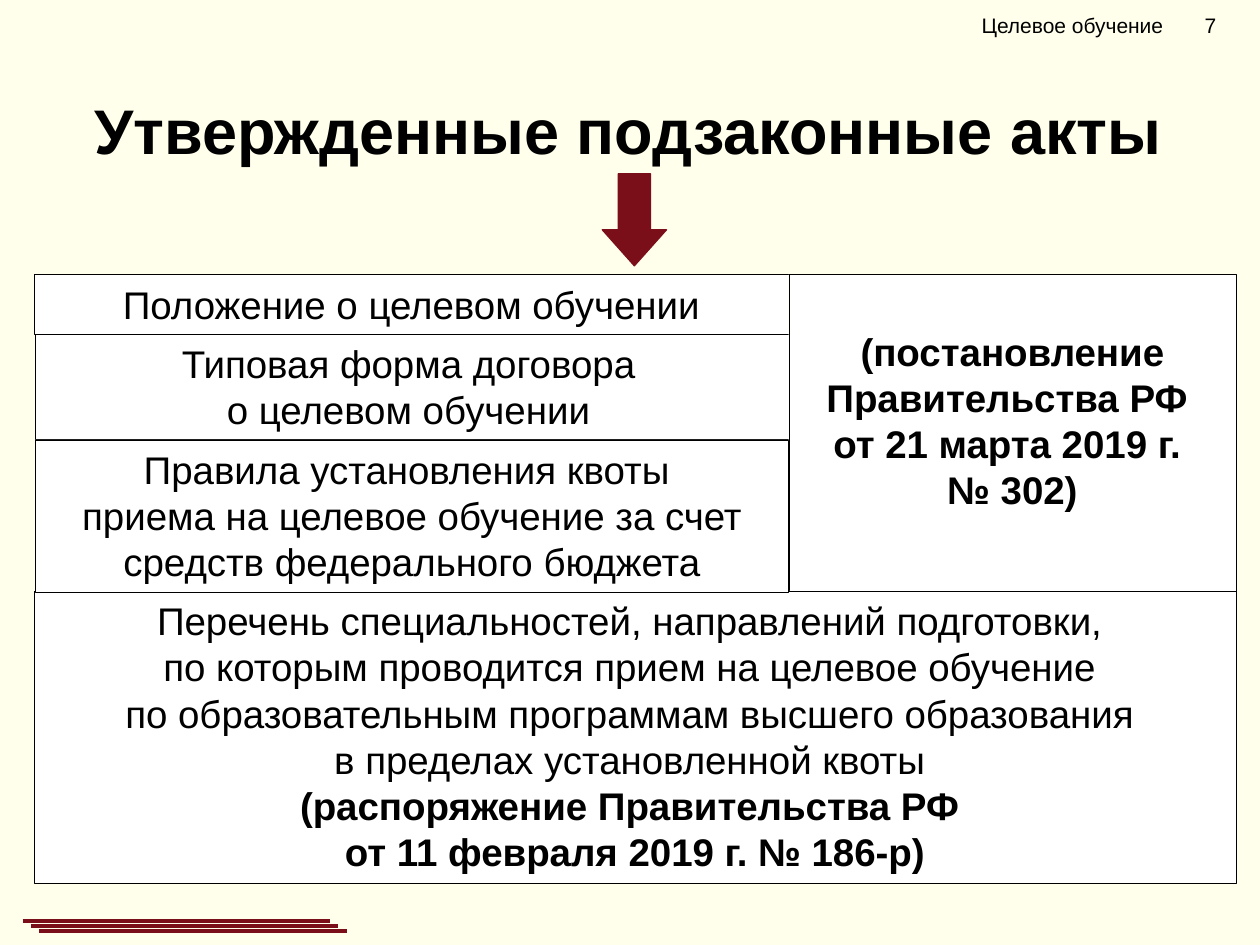
"""Build the slide on approved by-laws for targeted education."""
from lxml import etree
from pptx import Presentation
from pptx.dml.color import RGBColor as RGB
from pptx.enum.shapes import MSO_CONNECTOR as CONN, MSO_SHAPE as SHAPE
from pptx.enum.text import MSO_ANCHOR as ANCHOR, PP_ALIGN as ALIGN
from pptx.oxml.ns import qn
from pptx.util import Inches, Pt

THEME = {
    "font": "Arial", "paper": RGB(255, 255, 235), "white": RGB(255, 255, 255),
    "ink": RGB(0, 0, 0), "accent": RGB(0x7B, 0x0F, 0x19),
    "title": Pt(36), "body": Pt(22), "header": Pt(12),
}


def write(sp, lines, size, bold_from, align=ALIGN.CENTER, **frame):
    tf = sp.text_frame
    for name, value in {"word_wrap": True, "vertical_anchor": ANCHOR.TOP, **frame}.items():
        setattr(tf, name, value)
    for i, line in enumerate(lines):
        p = tf.paragraphs[0] if i == 0 else tf.add_paragraph()
        p.alignment = align
        r = p.add_run()
        r.text = line
        font = {"name": THEME["font"], "size": THEME[size], "bold": i >= bold_from}
        for name, value in font.items():
            setattr(r.font, name, value)
        r.font.color.rgb = THEME["ink"]


def paint(sp, fill, line, width):
    sp.shadow.inherit = False
    sp.fill.solid()
    sp.fill.fore_color.rgb = THEME[fill]
    sp.line.color.rgb = THEME[line]
    sp.line.width = Pt(width)


prs = Presentation()
prs.slide_width, prs.slide_height = Inches(10), Inches(7.5)
s = prs.slides.add_slide(prs.slide_layouts[6])
s.background.fill.solid()
s.background.fill.fore_color.rgb = THEME["paper"]

arrow = s.shapes.add_shape(SHAPE.DOWN_ARROW, Inches(4.78), Inches(1.38), Inches(0.51), Inches(0.73))
arrow.adjustments[0], arrow.adjustments[1] = 0.5, 0.56
paint(arrow, "accent", "accent", 0.75)

title = s.shapes.add_textbox(Inches(0.26), Inches(0.68), Inches(9.59), Inches(0.71))
write(title, ["Утвержденные подзаконные акты "], "title", 0)

header = s.shapes.add_textbox(Inches(7.44), Inches(0), Inches(2.56), Inches(0.4))
write(header, ["Целевое обучение\t7"], "header", 1, ALIGN.LEFT,
      vertical_anchor=ANCHOR.MIDDLE, margin_left=Inches(0.35))
tabs = etree.SubElement(header.text_frame.paragraphs[0]._p.get_or_add_pPr(), qn("a:tabLst"))
etree.SubElement(tabs, qn("a:tab"), pos=str(Inches(1.77)), algn="l")

acts = [
    (0.27, 2.18, 5.99, 0.47, 1, 0.05, ["Положение о целевом обучении"]),
    (0.28, 2.65, 6.01, 0.84, 2, 0.05, ["Типовая форма договора ", "о целевом обучении "]),
    (6.26, 2.18, 3.55, 2.69, 0, 0.42, [
        "(постановление Правительства РФ ", "от 21 марта 2019 г. ", "№ 302)"]),
    (0.27, 4.69, 9.54, 2.32, 4, 0.05, [
        "Перечень специальностей, направлений подготовки, ",
        "по которым проводится прием на целевое обучение ",
        "по образовательным программам высшего образования ",
        "в пределах установленной квоты ",
        "(распоряжение Правительства РФ ",
        "от 11 февраля 2019 г. № 186-р)"]),
    (0.28, 3.49, 5.98, 1.21, 2, 0.05, [
        "Правила установления квоты ",
        "приема на целевое обучение за счет средств федерального бюджета"]),
]
for x, y, w, h, bold_from, top, lines in acts:
    sp = s.shapes.add_shape(SHAPE.RECTANGLE, Inches(x), Inches(y), Inches(w), Inches(h))
    paint(sp, "white", "ink", 0.25)
    write(sp, lines, "body", bold_from, margin_top=Inches(top))

for i in range(3):
    x, y = 0.18 + 0.065 * i, 7.31 + 0.04 * i
    stripe = s.shapes.add_connector(CONN.STRAIGHT, Inches(x), Inches(y), Inches(x + 2.44), Inches(y))
    stripe.line.color.rgb = THEME["accent"]
    stripe.line.width = Pt(2.25)
    etree.SubElement(stripe._element.spPr, qn("a:effectLst"))

prs.save("out.pptx")
